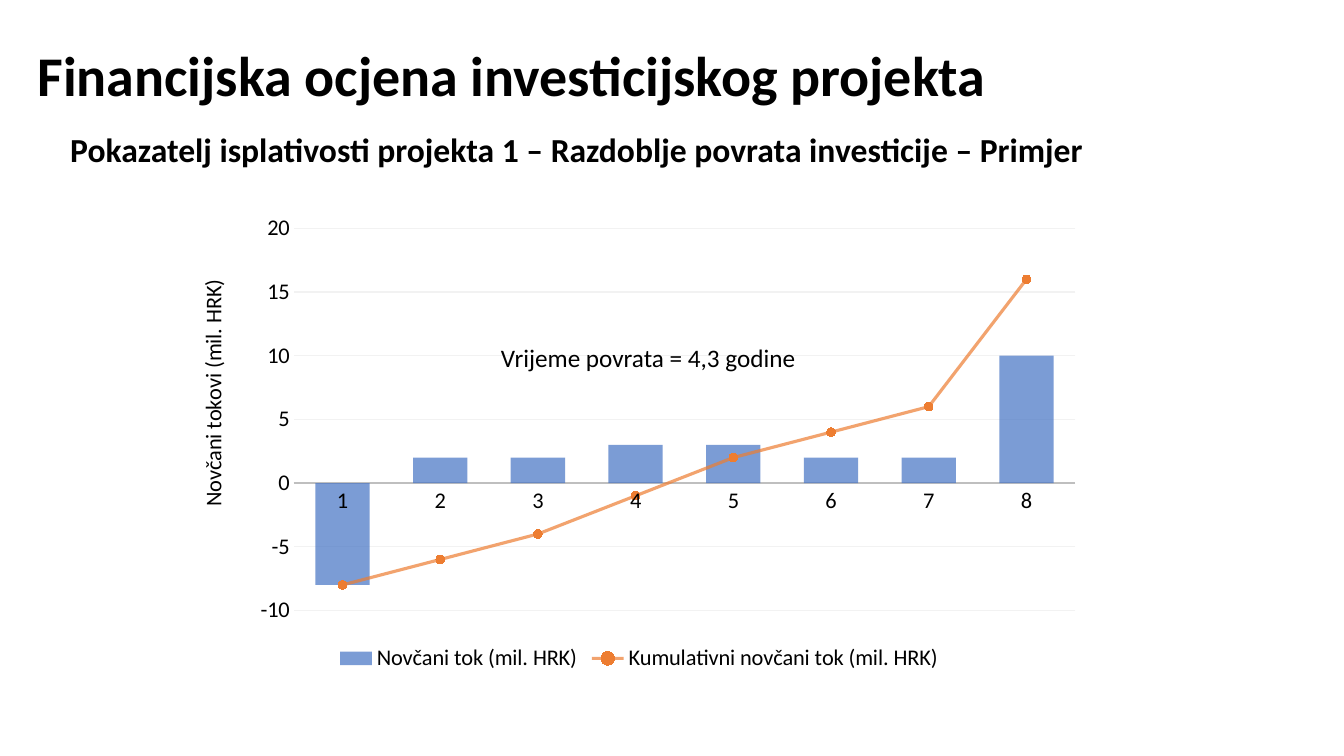
from lxml import etree
from pptx import Presentation
from pptx.chart.data import CategoryChartData
from pptx.dml.color import RGBColor
from pptx.enum.chart import XL_CHART_TYPE, XL_LEGEND_POSITION, XL_MARKER_STYLE, XL_TICK_MARK
from pptx.enum.text import MSO_ANCHOR, PP_ALIGN
from pptx.oxml import parse_xml
from pptx.oxml.ns import nsdecls, qn
from pptx.util import Cm, Pt

TITLE = "Financijska ocjena investicijskog projekta"
SUBTITLE = "Pokazatelj isplativosti projekta 1 – Razdoblje povrata investicije – Primjer"
PAYBACK = "Vrijeme povrata = 4,3 godine"
AXIS_TITLE = "Novčani tokovi (mil. HRK)"
YEARS = ["1", "2", "3", "4", "5", "6", "7", "8"]
CASH_FLOWS = {
    "Novčani tok (mil. HRK)": [-8, 2, 2, 3, 3, 2, 2, 10],
    "Kumulativni novčani tok (mil. HRK)": [-8, -6, -4, -1, 2, 4, 6, 16],
}
BLACK, BLUE, ORANGE = "000000", "4472C4", "ED7D31"
AXIS_GRAY, GRID_GRAY = "BFBFBF", "F2F2F2"


def color(value):
    return RGBColor.from_string(value)


def set_font(font, size, bold=False):
    font.name = "Calibri"
    font.size = Pt(size)
    font.bold = bold
    font.color.rgb = color(BLACK)


def set_text(shape, text, size, bold=False, alignment=PP_ALIGN.LEFT, spacing=1.0):
    shape.text_frame.word_wrap = True
    paragraph = shape.text_frame.paragraphs[0]
    paragraph.text = text
    paragraph.alignment = alignment
    paragraph.line_spacing = spacing
    set_font(paragraph.font, size, bold)


def set_fill(fill, value, opacity=None):
    fill.solid()
    fill.fore_color.rgb = color(value)
    if opacity:
        for swatch in fill._xPr.iter(qn("a:srgbClr")):
            etree.SubElement(swatch, qn("a:alpha")).set("val", str(opacity * 1000))


def set_layout(parent, position, **parts):
    for old in parent.findall(qn("c:layout")):
        parent.remove(old)
    values = "".join(f'<c:{name} val="{value}"/>' for name, value in parts.items())
    layout = f'<c:layout {nsdecls("c")}><c:manualLayout>{values}</c:manualLayout></c:layout>'
    parent.insert(position, parse_xml(layout))


def move_to_line_plot(chart):
    bar_plot = chart.plots[0]._element
    series = bar_plot.findall(qn("c:ser"))[1]
    for element in series.findall(qn("c:invertIfNegative")):
        series.remove(element)
    axes = "".join(f'<c:axId val="{axis.get("val")}"/>' for axis in bar_plot.findall(qn("c:axId")))
    line_plot = parse_xml(
        f'<c:lineChart {nsdecls("c")}><c:grouping val="stacked"/><c:varyColors val="0"/>'
        f'<c:marker val="1"/>{axes}</c:lineChart>'
    )
    line_plot.insert(2, series)
    bar_plot.addnext(line_plot)


def add_cash_flow_chart(slide):
    data = CategoryChartData()
    data.categories = YEARS
    for name, values in CASH_FLOWS.items():
        data.add_series(name, values)
    chart = slide.shapes.add_chart(
        XL_CHART_TYPE.COLUMN_CLUSTERED, Cm(4.65), Cm(5.16), Cm(22.91), Cm(11.89), data
    ).chart
    set_font(chart.font, 16)
    chart.has_title = False
    chart.has_legend = True
    chart.legend.position = XL_LEGEND_POSITION.BOTTOM
    chart.legend.include_in_layout = False
    set_font(chart.legend.font, 16)

    years, amounts = chart.category_axis, chart.value_axis
    for axis in (years, amounts):
        axis.major_tick_mark = axis.minor_tick_mark = XL_TICK_MARK.NONE
        set_font(axis.tick_labels.font, 16)
    years.format.line.width = Pt(1.25)
    set_fill(years.format.line.fill, AXIS_GRAY)
    amounts.minimum_scale, amounts.maximum_scale, amounts.major_unit = -10, 20, 5
    amounts.format.line.fill.background()
    amounts.major_gridlines.format.line.width = Pt(0.75)
    set_fill(amounts.major_gridlines.format.line.fill, GRID_GRAY)
    paragraph = amounts.axis_title.text_frame.paragraphs[0]
    paragraph.text = AXIS_TITLE
    set_font(paragraph.font, 16)
    body = amounts.axis_title.text_frame._txBody.find(qn("a:bodyPr"))
    body.set("rot", "-5400000")
    body.set("vert", "horz")
    set_layout(amounts.axis_title._element, 1, xMode="edge", yMode="edge", x=0.01, y=0.15)

    move_to_line_plot(chart)
    columns, line = chart.plots
    columns.gap_width = 80
    columns.vary_by_categories = False
    set_fill(columns.series[0].format.fill, BLUE, 70)
    columns.series[0].invert_if_negative = False
    cumulative = line.series[0]
    cumulative.smooth = False
    cumulative.format.line.width = Pt(2.25)
    set_fill(cumulative.format.line.fill, ORANGE, 70)
    cumulative.marker.style = XL_MARKER_STYLE.CIRCLE
    cumulative.marker.size = 6
    set_fill(cumulative.marker.format.fill, ORANGE)
    set_fill(cumulative.marker.format.line.fill, ORANGE)
    set_layout(columns._element.getparent(), 0, layoutTarget="inner", xMode="edge",
               yMode="edge", x=0.12, y=0.05, w=0.86, h=0.81)


def main():
    presentation = Presentation()
    presentation.slide_width, presentation.slide_height = Cm(33.87), Cm(19.05)
    slide = presentation.slides.add_slide(presentation.slide_layouts[5])

    title = slide.shapes.title
    title.left, title.top, title.width, title.height = Cm(0.69), Cm(0.13), Cm(31.5), Cm(3.68)
    title.text_frame.vertical_anchor = MSO_ANCHOR.MIDDLE
    set_text(title, TITLE, 40, bold=True, spacing=0.9)

    subtitle = slide.shapes.add_textbox(Cm(1.52), Cm(3.23), Cm(31.5), Cm(14.35))
    set_text(subtitle, SUBTITLE, 24, bold=True, spacing=0.9)

    add_cash_flow_chart(slide)

    payback = slide.shapes.add_textbox(Cm(11.05), Cm(8.51), Cm(10.57), Cm(1.03))
    set_text(payback, PAYBACK, 18, alignment=PP_ALIGN.CENTER)
    presentation.save("out.pptx")


if __name__ == "__main__":
    main()
